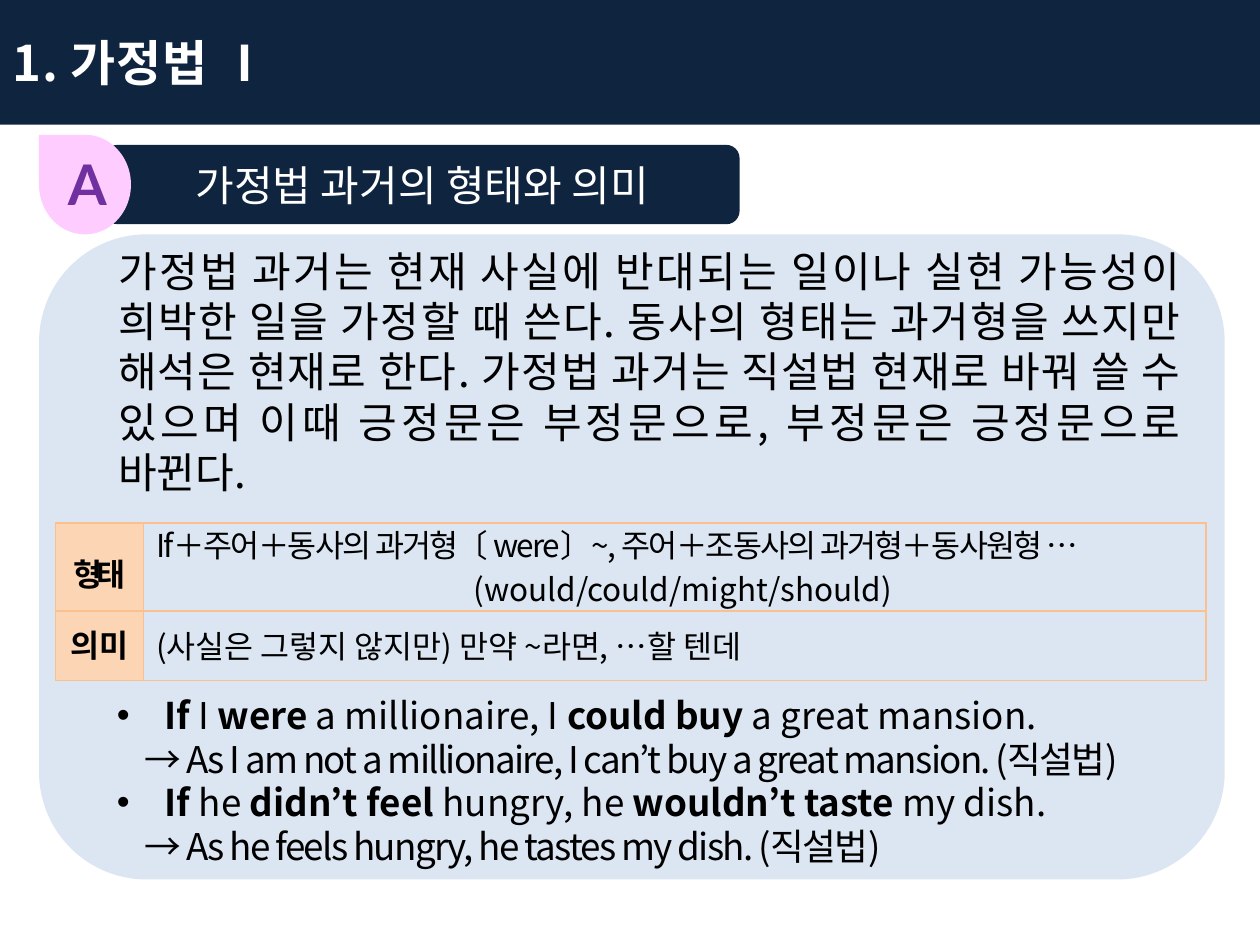
import dataclasses

import pptx
import pptx.dml.color
import pptx.enum.shapes
import pptx.enum.text
import pptx.oxml.ns
import pptx.util
from lxml import etree

SHAPES = pptx.enum.shapes.MSO_SHAPE
ALIGN = pptx.enum.text.PP_ALIGN
MIDDLE = pptx.enum.text.MSO_ANCHOR.MIDDLE
COLUMNS, ROWS = 100, 75  # grid cells of a tenth of an inch


@dataclasses.dataclass(frozen=True)
class Theme:
    navy: str = "0F243E"
    panel: str = "DCE6F2"
    pink: str = "FFCCFF"
    purple: str = "7030A0"
    peach: str = "FCD5B5"
    border: str = "FAC090"
    black: str = "000000"
    white: str = "FFFFFF"
    korean: str = "Noto Sans CJK KR"
    latin: str = "Lato"
    label: str = "Arial"
    title: int = 28
    badge: int = 32
    body: int = 24
    example: int = 21
    table: int = 18


THEME = Theme()


def rgb(value):
    return pptx.dml.color.RGBColor.from_string(value)


def add_child(parent, tag, **attributes):
    return etree.SubElement(parent, pptx.oxml.ns.qn(tag), attributes)


def write(paragraph, text, size=THEME.body, font=THEME.korean, color=THEME.black,
          bold=False, tracking=0, align=ALIGN.LEFT, line=None, before=0,
          margin=0, hanging=0, bullet=None):
    """Write text in a paragraph; parts between asterisks switch the weight."""
    paragraph.alignment = align
    paragraph.space_before = pptx.util.Pt(before)
    if line:
        paragraph.line_spacing = line
    properties = paragraph._p.get_or_add_pPr()
    properties.set("marL", str(pptx.util.Inches(margin)))
    properties.set("indent", str(-pptx.util.Inches(hanging)))
    if bullet:
        add_child(properties, "a:buFont", typeface="Arial")
        add_child(properties, "a:buChar", char=bullet)
    for index, part in enumerate(text.split("*")):
        if not part:
            continue
        run = paragraph.add_run()
        run.text = part
        run.font.size = pptx.util.Pt(size)
        run.font.name = font
        run.font.bold = bold != (index % 2 == 1)
        run.font.color.rgb = rgb(color)
        run_properties = run._r.get_or_add_rPr()
        add_child(run_properties, "a:ea", typeface=font)
        if tracking:
            run_properties.set("spc", str(round(tracking * 100)))


class Lesson:
    def __init__(self, theme):
        self.theme = theme
        self.presentation = pptx.Presentation()
        self.presentation.slide_width = pptx.util.Inches(10)
        self.presentation.slide_height = pptx.util.Inches(7.5)
        self.slide = self.presentation.slides.add_slide(
            self.presentation.slide_layouts[6])

    def across(self, columns):
        return round(self.presentation.slide_width * columns / COLUMNS)

    def down(self, rows):
        return round(self.presentation.slide_height * rows / ROWS)

    def place(self, left, top, width, height):
        return self.across(left), self.down(top), self.across(width), self.down(height)

    def shape(self, kind, box, fill, rotation=0):
        shape = self.slide.shapes.add_shape(kind, *self.place(*box))
        shape.shadow.inherit = False
        shape.fill.solid()
        shape.fill.fore_color.rgb = rgb(fill)
        shape.line.fill.background()
        shape.rotation = rotation
        shape.text_frame.word_wrap = True
        shape.text_frame.vertical_anchor = MIDDLE
        return shape

    def text(self, box, text, **style):
        frame = self.slide.shapes.add_textbox(*self.place(*box)).text_frame
        frame.word_wrap = True
        write(frame.paragraphs[0], text, **style)

    def fill_frame(self, frame, paragraphs):
        for index, (text, style) in enumerate(paragraphs):
            paragraph = frame.add_paragraph() if index else frame.paragraphs[0]
            write(paragraph, text, **style)

    def border(self, cell):
        properties = cell._tc.get_or_add_tcPr()
        for position, side in enumerate(("a:lnL", "a:lnR", "a:lnT", "a:lnB")):
            line = etree.Element(pptx.oxml.ns.qn(side), w=str(pptx.util.Pt(1)))
            solid = add_child(line, "a:solidFill")
            add_child(solid, "a:srgbClr", val=self.theme.border)
            properties.insert(position, line)

    def table(self, left, top, widths, heights, rows):
        box = self.place(left, top, sum(widths), sum(heights))
        table = self.slide.shapes.add_table(len(rows), len(widths), *box).table
        table.first_row = table.horz_banding = False
        for column, width in zip(table.columns, widths):
            column.width = self.across(width)
        for row, height, contents in zip(table.rows, heights, rows):
            row.height = self.down(height)
            for index, (cell, paragraphs) in enumerate(zip(row.cells, contents)):
                cell.vertical_anchor = MIDDLE
                cell.margin_top = cell.margin_bottom = 0
                if index == 0:
                    cell.fill.solid()
                    cell.fill.fore_color.rgb = rgb(self.theme.peach)
                else:
                    cell.fill.background()
                self.border(cell)
                self.fill_frame(cell.text_frame, paragraphs)


def main():
    theme = THEME
    lesson = Lesson(theme)

    # Explanation and examples, with a gap where the table lies
    explanation = dict(align=ALIGN.JUSTIFY, margin=0.28, line=pptx.util.Pt(28.7))
    result = dict(size=theme.example, align=ALIGN.JUSTIFY, margin=0.49,
                  line=pptx.util.Pt(25.1), tracking=-1)
    example = dict(result, margin=0.65, hanging=0.38, bullet="•", tracking=0)
    panel = lesson.shape(SHAPES.FLOWCHART_ALTERNATE_PROCESS,
                         (3.1, 18.6, 94.1, 51.2), theme.panel)
    lesson.fill_frame(panel.text_frame, [
        ("가정법 과거는 현재 사실에 반대되는 일이나 실현 가능성이 희박한 일을 "
         "가정할 때 쓴다. 동사의 형태는 과거형을 쓰지만 해석은 현재로 한다. "
         "가정법 과거는 직설법 현재로 바꿔 쓸 수 있으며 이때 긍정문은 부정문으로, "
         "부정문은 긍정문으로 바뀐다.", explanation),
        ("*If *I *were* a millionaire, I *could buy *a great mansion.",
         dict(example, before=112)),
        ("→ As I am not a millionaire, I can’t buy a great mansion. (직설법)", result),
        ("*If* he *didn’t feel *hungry, he *wouldn’t taste *my dish.", example),
        ("→ As he feels hungry, he tastes my dish. (직설법)", result),
    ])

    # Section heading
    heading = lesson.shape(SHAPES.FLOWCHART_ALTERNATE_PROCESS,
                           (8.3, 11.5, 50.4, 6.3), theme.navy)
    write(heading.text_frame.paragraphs[0], "가정법 과거의 형태와 의미",
          color=theme.white, align=ALIGN.CENTER)

    # Title band
    band = lesson.shape(SHAPES.RECTANGLE, (0, 0, 100, 9.9), theme.navy)
    write(band.text_frame.paragraphs[0], "1. 가정법 Ⅰ", size=theme.title,
          color=theme.white, bold=True, tracking=0.5)

    # Section letter
    lesson.shape(SHAPES.TEAR, (2.8, 11, 7.9, 7.3), theme.pink, rotation=270)
    lesson.text((4.4, 11.4, 4.7, 6.4), "A", size=theme.badge, font=theme.latin,
                color=theme.purple, bold=True)

    # Form and meaning
    label = dict(size=theme.table, bold=True, align=ALIGN.CENTER)
    form = dict(size=theme.table, line=pptx.util.Pt(25))
    lesson.table(4.4, 41.5, (7, 84.3), (7, 5.5), [
        [[("형태", dict(label, font=theme.label, tracking=-3, line=1.5))],
         [("If＋주어＋동사의 과거형〔 were〕~, 주어＋조동사의 과거형＋동사원형 …",
           dict(form, tracking=-1)),
          ("(would/could/might/should)", dict(form, margin=2.52))]],
        [[("의미", dict(label, font=theme.latin))],
         [("(사실은 그렇지 않지만) 만약 ~라면, …할 텐데", form)]],
    ])

    lesson.presentation.save("out.pptx")


if __name__ == "__main__":
    main()
